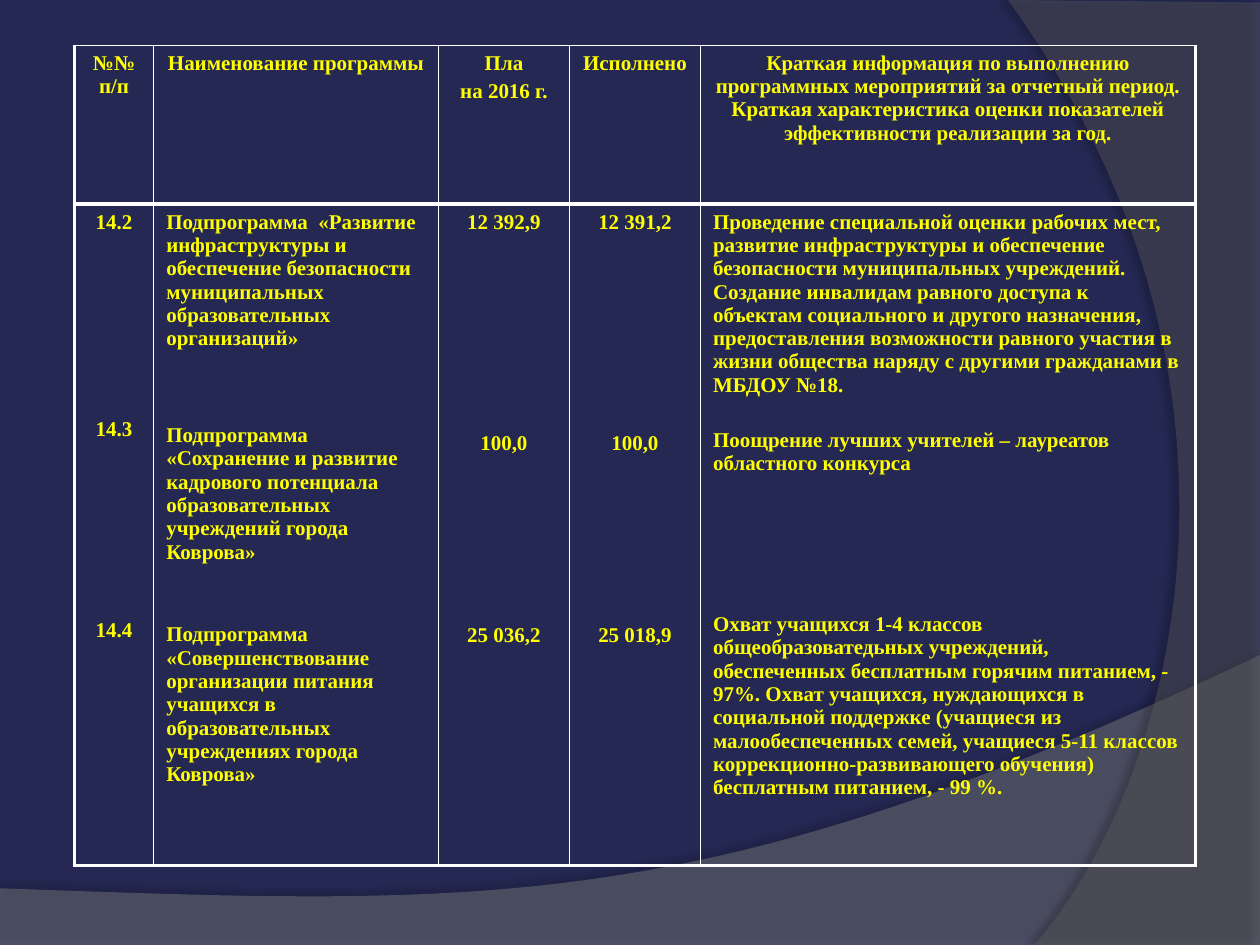
import dataclasses

import lxml.etree
import pptx
import pptx.dml.color
import pptx.enum.text
import pptx.oxml.ns
import pptx.util

Inches = pptx.util.Inches
Pt = pptx.util.Pt
CENTER = pptx.enum.text.PP_ALIGN.CENTER
LEFT = pptx.enum.text.PP_ALIGN.LEFT


@dataclasses.dataclass
class Theme:
    background: str = "242852"
    wave: str = "7F7F7F"
    arc: str = "5E5E5E"
    shadow: str = "000000"
    text: str = "FFFF00"
    border: str = "FFFFFF"
    font: str = "Times New Roman"
    size: float = 12
    thin: float = 1
    thick: float = 2.25


def rgb(value):
    return pptx.dml.color.RGBColor.from_string(value)


def add_node(parent, tag, **attributes):
    node = lxml.etree.SubElement(parent, pptx.oxml.ns.qn(tag))
    for name, value in attributes.items():
        node.set(name, str(value))
    return node


def curve(start, first, second, end, steps=48):
    """Points along a cubic curve, both ends included."""
    points = []
    for step in range(steps + 1):
        t = step / steps
        weights = ((1 - t) ** 3, 3 * t * (1 - t) ** 2, 3 * t * t * (1 - t), t ** 3)
        points.append(tuple(
            sum(weight * point[axis] for weight, point in zip(weights, (start, first, second, end)))
            for axis in (0, 1)))
    return points


class Builder:
    def __init__(self, deck, theme):
        self.theme = theme
        self.page = deck.slides.add_slide(deck.slide_layouts[6])
        fill = self.page.background.fill
        fill.solid()
        fill.fore_color.rgb = rgb(theme.background)

    def swoosh(self, points, color, opacity, shadow_opacity, distance, angle):
        outline = [(Inches(x), Inches(y)) for x, y in points]
        builder = self.page.shapes.build_freeform(*outline[0])
        builder.add_line_segments(outline[1:], close=True)
        shape = builder.convert_to_shape()
        shape.fill.solid()
        shape.fill.fore_color.rgb = rgb(color)
        shape.line.fill.background()
        shape.shadow.inherit = False
        properties = shape._element.spPr
        fill_color = properties.find(".//" + pptx.oxml.ns.qn("a:srgbClr"))
        add_node(fill_color, "a:alpha", val=opacity * 1000)
        effects = properties.find(pptx.oxml.ns.qn("a:effectLst"))
        shadow = add_node(effects, "a:outerShdw", blurRad=Pt(4), dist=Pt(distance),
                          dir=angle * 60000, algn="ctr", rotWithShape=0)
        shadow_color = add_node(shadow, "a:srgbClr", val=self.theme.shadow)
        add_node(shadow_color, "a:alpha", val=shadow_opacity * 1000)

    def borders(self, cell, **widths):
        properties = cell._tc.get_or_add_tcPr()
        for side in "LRTB":
            line = add_node(properties, "a:ln" + side, w=Pt(widths[side]))
            fill = add_node(line, "a:solidFill")
            add_node(fill, "a:srgbClr", val=self.theme.border)

    def fill_text(self, cell, entries, alignment):
        frame = cell.text_frame
        for index, (gap, text) in enumerate(entries):
            para = frame.add_paragraph() if index else frame.paragraphs[0]
            para.alignment = alignment
            if gap:
                para.space_before = Pt(gap)
            span = para.add_run()
            span.text = text
            span.font.name = self.theme.font
            span.font.size = Pt(self.theme.size)
            span.font.bold = True
            span.font.color.rgb = rgb(self.theme.text)

    def table(self, left, top, widths, heights, rows, alignments):
        thin, thick = self.theme.thin, self.theme.thick
        table = self.page.shapes.add_table(
            len(heights), len(widths), Inches(left), Inches(top),
            Inches(sum(widths)), Inches(sum(heights))).table
        table.first_row = table.horz_banding = False
        for column, width in zip(table.columns, widths):
            column.width = Inches(width)
        for row, height in zip(table.rows, heights):
            row.height = Inches(height)
        last = len(widths) - 1
        for r, row in enumerate(rows):
            for c, entries in enumerate(row):
                cell = table.cell(r, c)
                self.borders(cell, L=thin if c else thick, R=thick if c == last else thin,
                             T=thick if r else thin, B=thick)
                cell.fill.background()
                self.fill_text(cell, entries, alignments[r][c])


# Each entry is (space before in points, text)
HEADER = [
    [(0, "№№ п/п")],
    [(0, "Наименование программы")],
    [(0, "Пла"), (2.6, "на 2016 г.")],
    [(0, "Исполнено")],
    [(0, "Краткая информация по выполнению программных мероприятий за отчетный период. "
         "Краткая характеристика оценки показателей эффективности реализации за год.")],
]
PROGRAMS = [
    [(0, "14.2"), (105, "14.3"), (102, "14.4")],
    [(0, "Подпрограмма  «Развитие инфраструктуры и обеспечение безопасности "
         "муниципальных образовательных организаций»"),
     (42, "Подпрограмма «Сохранение и развитие кадрового потенциала "
          "образовательных учреждений города Коврова»"),
     (34, "Подпрограмма  «Совершенствование организации питания учащихся в "
          "образовательных учреждениях города Коврова»")],
    [(0, "12 392,9"), (113, "100,0"), (96.7, "25 036,2")],
    [(0, "12 391,2"), (113, "100,0"), (96.7, "25 018,9")],
    [(0, "Проведение специальной оценки рабочих мест, развитие инфраструктуры и "
         "обеспечение безопасности муниципальных учреждений. Создание инвалидам "
         "равного доступа к объектам социального и другого назначения, "
         "предоставления возможности равного участия в жизни общества наряду с "
         "другими гражданами в МБДОУ №18."),
     (18, "Поощрение лучших учителей – лауреатов областного конкурса"),
     (78.7, "Охват учащихся 1-4 классов общеобразоватедьных учреждений, "
            "обеспеченных бесплатным горячим питанием, - 97%. Охват учащихся, "
            "нуждающихся в социальной поддержке (учащиеся из малообеспеченных "
            "семей, учащиеся 5-11 классов коррекционно-развивающего обучения) "
            "бесплатным питанием, - 99 %.")],
]


def main():
    deck = pptx.Presentation()
    deck.slide_width, deck.slide_height = Inches(10), Inches(7.5)
    theme = Theme()
    builder = Builder(deck, theme)

    # Background wave and arc
    wave = [(0, 7.5), (10, 7.5)] + curve((10, 5.2), (5.59, 7.29), (3.91, 7.19), (0, 7.05))
    builder.swoosh(wave, theme.wave, 45, 35, 3.5, 270)
    arc = [(10, 0.02), (10, 7.5)] + curve((8.21, 7.5), (9.35, 6.19), (10.18, 3), (8, 0))
    builder.swoosh(arc, theme.arc, 40, 45, 4, 180)

    # Programme table
    builder.table(0.59, 0.36, [0.63, 2.26, 1.04, 1.04, 3.93], [1.26, 5.25],
                  [HEADER, PROGRAMS],
                  [[CENTER] * 5, [CENTER, LEFT, CENTER, CENTER, LEFT]])

    deck.save("out.pptx")


if __name__ == "__main__":
    main()
